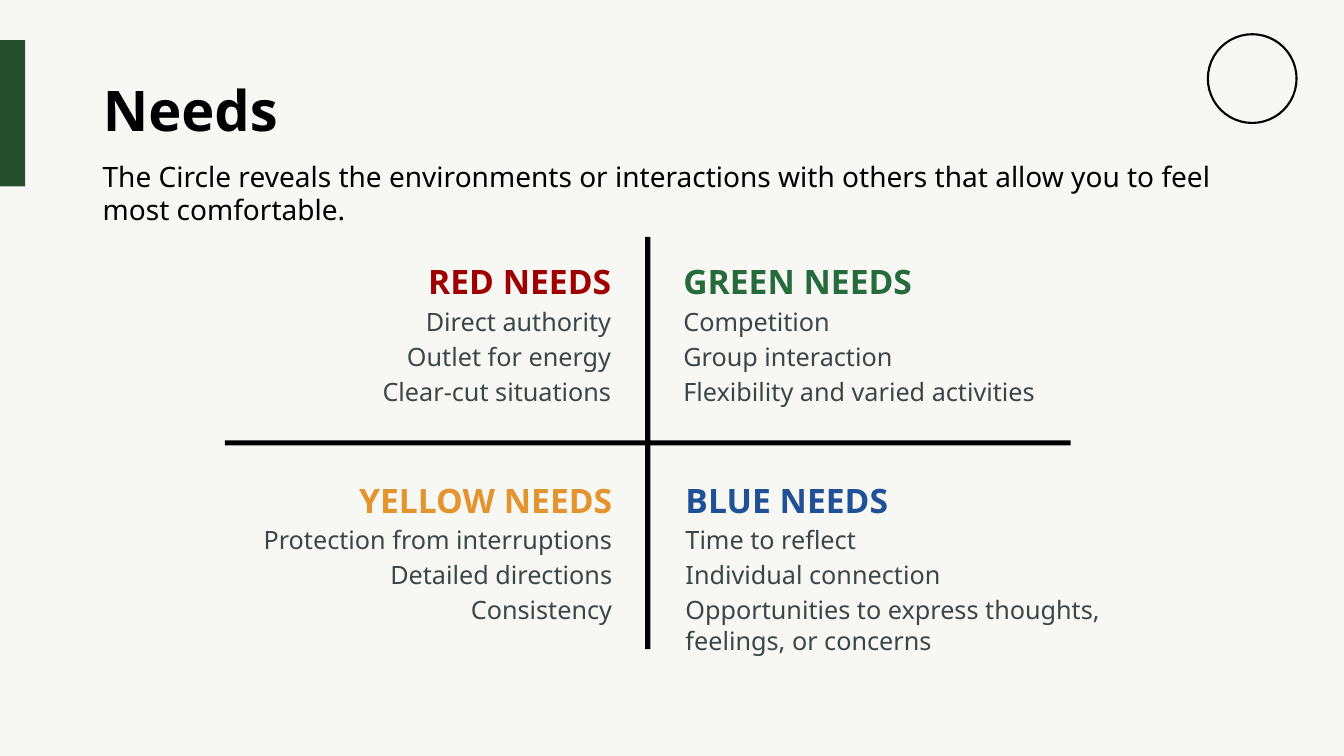
from dataclasses import dataclass
from typing import NamedTuple

from pptx import Presentation
from pptx.dml.color import RGBColor
from pptx.enum.shapes import MSO_SHAPE
from pptx.enum.text import MSO_ANCHOR, PP_ALIGN
from pptx.util import Inches, Pt

RECTANGLE = MSO_SHAPE.RECTANGLE
OVAL = MSO_SHAPE.OVAL
TOP = MSO_ANCHOR.TOP
MIDDLE = MSO_ANCHOR.MIDDLE
LEFT = PP_ALIGN.LEFT
RIGHT = PP_ALIGN.RIGHT
TITLE_ONLY = 5


@dataclass(frozen=True)
class Theme:
    font: str = "Noto Sans"
    paper: str = "F7F7F3"
    ink: str = "000000"
    body: str = "3C4647"
    accent: str = "24502F"
    red: str = "9E0000"
    green: str = "256B3B"
    yellow: str = "E4942E"
    blue: str = "205097"
    title_size: float = 40
    heading_size: float = 24
    intro_size: float = 20
    body_size: float = 18
    outline: float = 1.5
    item_gap: float = 3.4


class Box(NamedTuple):
    left: int
    top: int
    width: int
    height: int

    def area(self, left, top, width, height):
        return Box(
            round(self.left + self.width * left / 100),
            round(self.top + self.height * top / 100),
            round(self.width * width / 100),
            round(self.height * height / 100),
        )


class Need(NamedTuple):
    heading: str
    color: str
    alignment: PP_ALIGN
    shares: tuple
    items: tuple


THEME = Theme()
NEEDS = (
    Need("RED NEEDS", THEME.red, RIGHT, (9.06, 4.65, 37.78, 38.63),
         ("Direct authority", "Outlet for energy", "Clear-cut situations")),
    Need("GREEN NEEDS", THEME.green, LEFT, (53.04, 4.65, 49.11, 44.74),
         ("Competition", "Group interaction", "Flexibility and varied activities")),
    Need("YELLOW NEEDS", THEME.yellow, RIGHT, (1.19, 57.7, 45.77, 44.5),
         ("Protection from interruptions", "Detailed directions", "Consistency")),
    Need("BLUE NEEDS", THEME.blue, LEFT, (53.28, 57.7, 62.81, 44.99),
         ("Time to reflect", "Individual connection",
          "Opportunities to express thoughts, feelings, or concerns")),
)


def format_runs(paragraph, size, color, bold=False):
    for run in paragraph.runs:
        run.font.name = THEME.font
        run.font.size = Pt(size)
        run.font.bold = bold
        run.font.color.rgb = RGBColor.from_string(color)


def add_plain_shape(slide, kind, box, fill, line=None):
    shape = slide.shapes.add_shape(kind, *box)
    shape.shadow.inherit = False
    shape.fill.solid()
    shape.fill.fore_color.rgb = RGBColor.from_string(fill)
    if line:
        shape.line.color.rgb = RGBColor.from_string(line)
        shape.line.width = Pt(THEME.outline)
    else:
        shape.line.fill.background()
    return shape


def add_decoration(slide, box):
    add_plain_shape(slide, RECTANGLE, box.area(0, 5.33, 1.88, 19.33), THEME.accent)
    add_plain_shape(slide, OVAL, box.area(89.87, 4.53, 6.6, 11.73), THEME.paper, THEME.ink)


def add_header(slide, box, title_text, intro_text):
    title = slide.shapes.title
    title.left, title.top, title.width, title.height = box.area(0, 0, 100, 76.32)
    title.text_frame.text = title_text
    title.text_frame.vertical_anchor = MIDDLE
    paragraph = title.text_frame.paragraphs[0]
    paragraph.alignment = LEFT
    paragraph.line_spacing = 0.9
    format_runs(paragraph, THEME.title_size, THEME.ink, True)

    intro = slide.shapes.add_textbox(*box.area(0, 59.47, 100, 40.53))
    intro.text_frame.word_wrap = True
    intro.text_frame.text = intro_text
    format_runs(intro.text_frame.paragraphs[0], THEME.intro_size, THEME.ink)


def add_need(slide, box, need):
    frame = add_plain_shape(slide, RECTANGLE, box, THEME.paper).text_frame
    frame.word_wrap = True
    frame.vertical_anchor = TOP
    frame.text = "\n".join((need.heading, *need.items))
    heading, *items = frame.paragraphs
    heading.alignment = need.alignment
    format_runs(heading, THEME.heading_size, need.color, True)
    for paragraph in items:
        paragraph.alignment = need.alignment
        paragraph.space_before = Pt(THEME.item_gap)
        format_runs(paragraph, THEME.body_size, THEME.body)


def add_matrix(slide, box, needs):
    for need in needs:
        add_need(slide, box.area(*need.shares), need)
    for bar in ((49.7, 0, 0.6, 100), (0, 49.39, 100, 1.22)):
        add_plain_shape(slide, RECTANGLE, box.area(*bar), THEME.ink)


def main():
    presentation = Presentation()
    presentation.slide_width = Inches(13.33)
    presentation.slide_height = Inches(7.5)
    slide = presentation.slides.add_slide(presentation.slide_layouts[TITLE_ONLY])
    slide.background.fill.solid()
    slide.background.fill.fore_color.rgb = RGBColor.from_string(THEME.paper)

    page = Box(0, 0, presentation.slide_width, presentation.slide_height)
    add_decoration(slide, page)
    add_header(
        slide,
        page.area(6.9, 5.33, 86.27, 25.33),
        "Needs",
        "The Circle reveals the environments or interactions with others "
        "that allow you to feel most comfortable.",
    )
    add_matrix(slide, page.area(16.73, 31.33, 62.94, 54.53), NEEDS)
    presentation.save("out.pptx")


if __name__ == "__main__":
    main()
